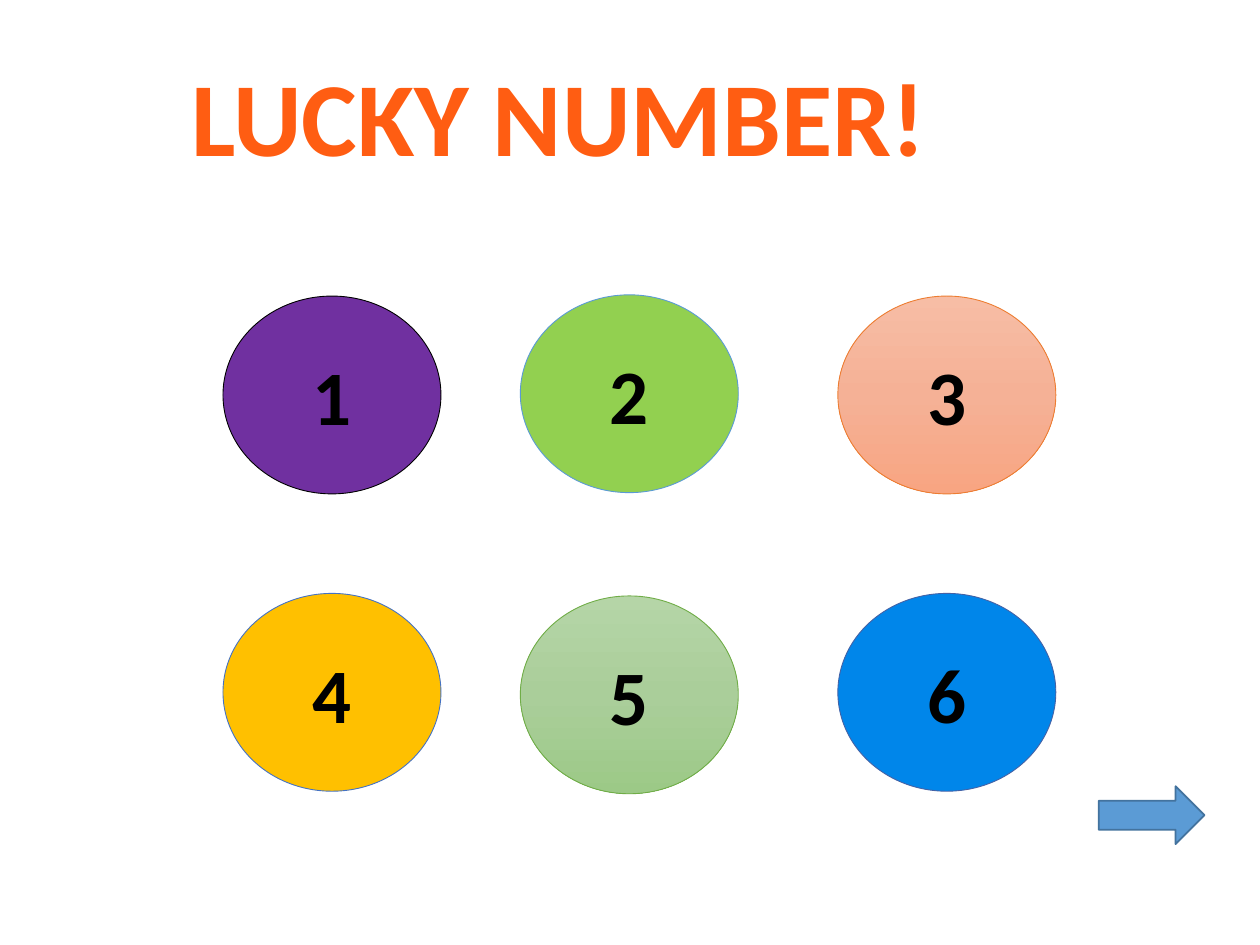
from copy import deepcopy

from pptx import Presentation
from pptx.dml.color import RGBColor
from pptx.enum.shapes import MSO_SHAPE as SHAPE
from pptx.enum.text import MSO_ANCHOR as ANCHOR, PP_ALIGN as ALIGN
from pptx.util import Inches, Pt

COLORS = {
    "title": "FF5D12", "black": "000000", "purple": "7030A0",
    "lime": "92D050", "sky": "5B9BD5", "orange": "ED7D31",
    "gold": "FFC000", "blue": "4472C4", "green": "70AD47",
    "azure": "0086EA", "navy": "4462A6", "steel": "43739E",
    "peach_top": "F7BDA5", "peach_mid": "F5B196", "peach_end": "F8A582",
    "sage_top": "B5D5A7", "sage_mid": "AACE9A", "sage_end": "9CC987",
}
TITLE = "LUCKY NUMBER!"
FONT = "Calibri"
BALLS = [
    ("1", ["purple"], "black", 2.35),
    ("2", ["lime"], "sky", 2.34),
    ("3", ["peach_top", "peach_mid", "peach_end"], "orange", 2.35),
    ("4", ["gold"], "blue", 4.71),
    ("5", ["sage_top", "sage_mid", "sage_end"], "green", 4.73),
    ("6", ["azure"], "navy", 4.71),
]
COLUMNS = [1.77, 4.13, 6.65]
BALL_W, BALL_H = 1.73, 1.57


def rgb(name):
    return RGBColor.from_string(COLORS[name])


def style_text(tf, text, size, color, align, anchor):
    tf.text = text
    tf.vertical_anchor = anchor
    p = tf.paragraphs[0]
    p.alignment = align
    p.line_spacing = 1.0
    font = p.runs[0].font
    font.name, font.size, font.bold = FONT, Pt(size), True
    font.color.rgb = rgb(color)


def paint(sp, names):
    fill = sp.fill
    if len(names) == 1:
        fill.solid()
        fill.fore_color.rgb = rgb(names[0])
        return
    fill.gradient()
    fill.gradient_angle = 270
    stop_list = sp._element.spPr.xpath(".//a:gsLst")[0]
    while len(stop_list) < len(names):
        stop_list.append(deepcopy(stop_list[-1]))
    for i, (stop, name) in enumerate(zip(fill.gradient_stops, names)):
        stop.color.rgb = rgb(name)
        stop.position = i / (len(names) - 1)


def add_shape(s, kind, box, fills, line, width):
    sp = s.shapes.add_shape(kind, *map(Inches, box))
    sp.shadow.inherit = False
    paint(sp, fills)
    sp.line.color.rgb = rgb(line)
    sp.line.width = Pt(width)
    return sp


def main():
    """Build the lucky number slide."""
    prs = Presentation()
    prs.slide_width, prs.slide_height = Inches(10), Inches(7.5)
    s = prs.slides.add_slide(prs.slide_layouts[5])

    title = s.shapes.title
    title.left, title.top = Inches(1.42), Inches(0.36)
    title.width, title.height = Inches(7.4), Inches(1.57)
    style_text(title.text_frame, TITLE, 60, "title", ALIGN.LEFT, ANCHOR.TOP)

    for i, (number, fills, line, top) in enumerate(BALLS):
        box = (COLUMNS[i % len(COLUMNS)], top, BALL_W, BALL_H)
        sp = add_shape(s, SHAPE.OVAL, box, fills, line, 0.5)
        style_text(sp.text_frame, number, 44, "black", ALIGN.CENTER, ANCHOR.MIDDLE)

    add_shape(s, SHAPE.RIGHT_ARROW, (8.72, 6.24, 0.84, 0.46), ["sky"], "steel", 1)
    prs.save("out.pptx")


if __name__ == "__main__":
    main()
